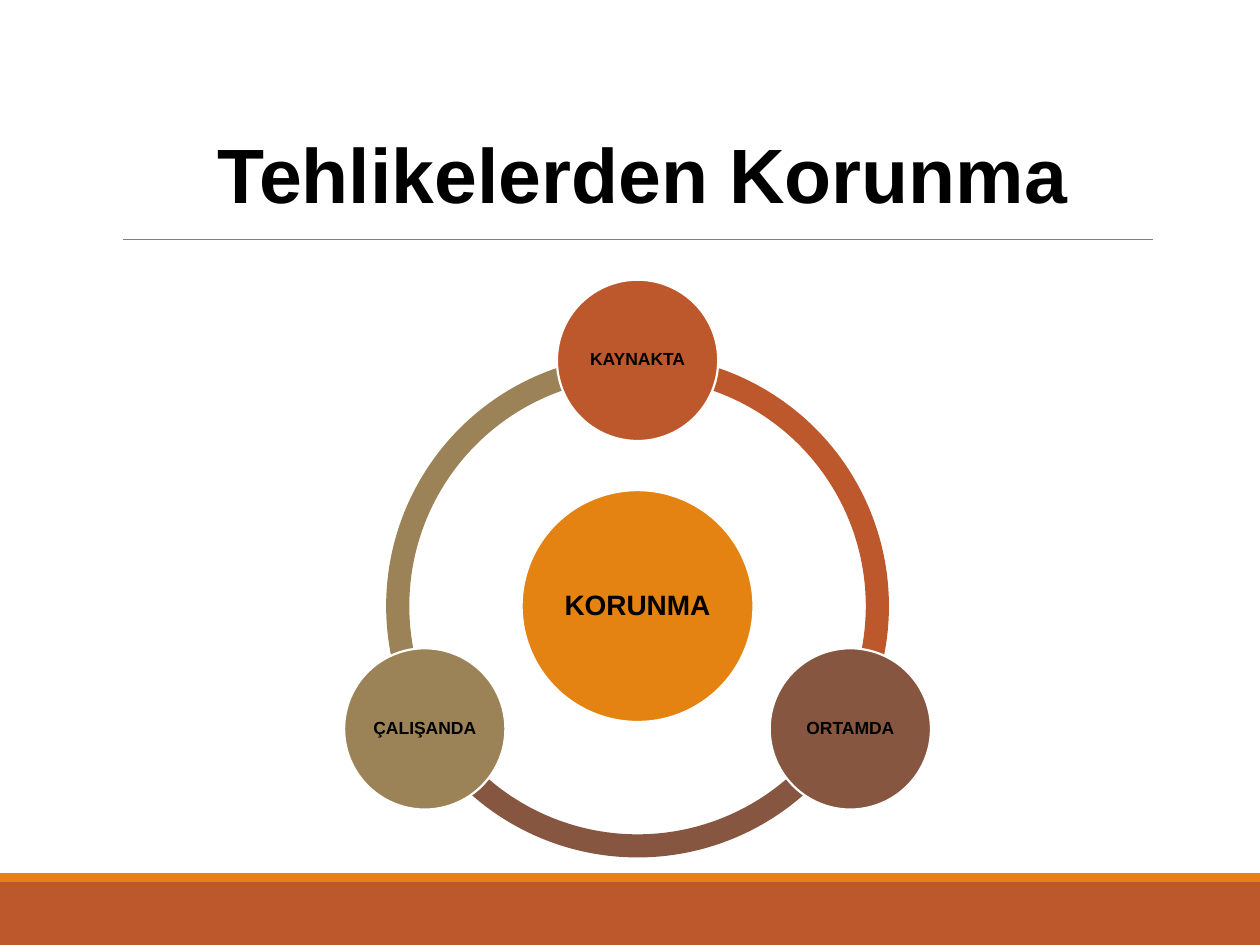
from dataclasses import dataclass
from math import cos, radians, sin

from lxml.etree import SubElement
from pptx import Presentation
from pptx.dml.color import RGBColor
from pptx.enum.shapes import MSO_CONNECTOR, MSO_SHAPE
from pptx.enum.text import MSO_ANCHOR, PP_ALIGN
from pptx.oxml.ns import qn
from pptx.util import Inches, Pt


@dataclass(frozen=True)
class Theme:
    font: str = "Arial"
    text: str = "000000"
    white: str = "FFFFFF"
    rule: str = "808080"
    orange: str = "E48312"
    rust: str = "BD582C"
    brown: str = "865640"
    sand: str = "9B8357"
    title_size: int = 44
    hub_size: int = 16
    node_size: int = 10


THEME = Theme()
CENTER_X, CENTER_Y = 5.06, 4.81
RING_SIZE, RING_THICKNESS = 3.99, 0.046
ORBIT = 1.95
HUB_SIZE, NODE_SIZE = 1.84, 1.28
NODES = [
    ("KAYNAKTA", 270, THEME.rust),
    ("ORTAMDA", 30, THEME.brown),
    ("ÇALIŞANDA", 150, THEME.sand),
]


def rgb(color):
    return RGBColor.from_string(color)


def set_text(shape, text, size):
    tf = shape.text_frame
    tf.text = text
    tf.word_wrap = True
    tf.vertical_anchor = MSO_ANCHOR.MIDDLE
    tf.margin_left = tf.margin_right = tf.margin_top = tf.margin_bottom = 0
    p = tf.paragraphs[0]
    p.alignment = PP_ALIGN.CENTER
    p.line_spacing = 0.9
    font = p.runs[0].font
    font.name, font.size, font.bold = THEME.font, Pt(size), True
    font.color.rgb = rgb(THEME.text)


def add_filled(s, kind, left, top, width, height, color):
    sp = s.shapes.add_shape(kind, Inches(left), Inches(top), Inches(width), Inches(height))
    sp.shadow.inherit = False
    sp.fill.solid()
    sp.fill.fore_color.rgb = rgb(color)
    sp.line.fill.background()
    return sp


def add_centered(s, kind, x, y, size, color):
    return add_filled(s, kind, x - size / 2, y - size / 2, size, size, color)


def add_circle(s, x, y, size, color, text, text_size):
    sp = add_centered(s, MSO_SHAPE.OVAL, x, y, size, color)
    sp.line.color.rgb = rgb(THEME.white)
    sp.line.width = Pt(1.25)
    set_text(sp, text, text_size)


def add_arc(s, start, end, color):
    sp = add_centered(s, MSO_SHAPE.BLOCK_ARC, CENTER_X, CENTER_Y, RING_SIZE, color)
    units_per_degree = 0.6
    sp.adjustments[0] = start * units_per_degree
    sp.adjustments[1] = end * units_per_degree
    sp.adjustments[2] = RING_THICKNESS


def add_rule(s, left, right, y):
    line = s.shapes.add_connector(
        MSO_CONNECTOR.STRAIGHT, Inches(left), Inches(y), Inches(right), Inches(y))
    line.line.color.rgb = rgb(THEME.rule)
    line.line.width = Pt(0.5)
    SubElement(line._element.spPr, qn("a:effectLst"))


def add_title(s, text):
    title = s.shapes.title
    title.left, title.top = Inches(0.75), Inches(0.99)
    title.width, title.height = Inches(8.71), Inches(0.86)
    set_text(title, text, THEME.title_size)


def add_cycle(s):
    for i, (_, start, _) in reversed(list(enumerate(NODES))):
        end = NODES[(i + 1) % len(NODES)][1]
        add_arc(s, start, end, NODES[i][2])
    add_circle(s, CENTER_X, CENTER_Y, HUB_SIZE, THEME.orange, "KORUNMA", THEME.hub_size)
    for text, angle, color in NODES:
        x = CENTER_X + ORBIT * cos(radians(angle))
        y = CENTER_Y + ORBIT * sin(radians(angle))
        add_circle(s, x, y, NODE_SIZE, color, text, THEME.node_size)


def main():
    prs = Presentation()
    prs.slide_width, prs.slide_height = Inches(10), Inches(7.5)
    s = prs.slides.add_slide(prs.slide_layouts[5])
    add_filled(s, MSO_SHAPE.RECTANGLE, 0, 7, 10, 0.5, THEME.rust)
    add_filled(s, MSO_SHAPE.RECTANGLE, 0, 6.93, 10, 0.07, THEME.orange)
    add_rule(s, 0.98, 9.15, 1.9)
    add_title(s, "Tehlikelerden Korunma")
    add_cycle(s)
    prs.save("out.pptx")


if __name__ == "__main__":
    main()
